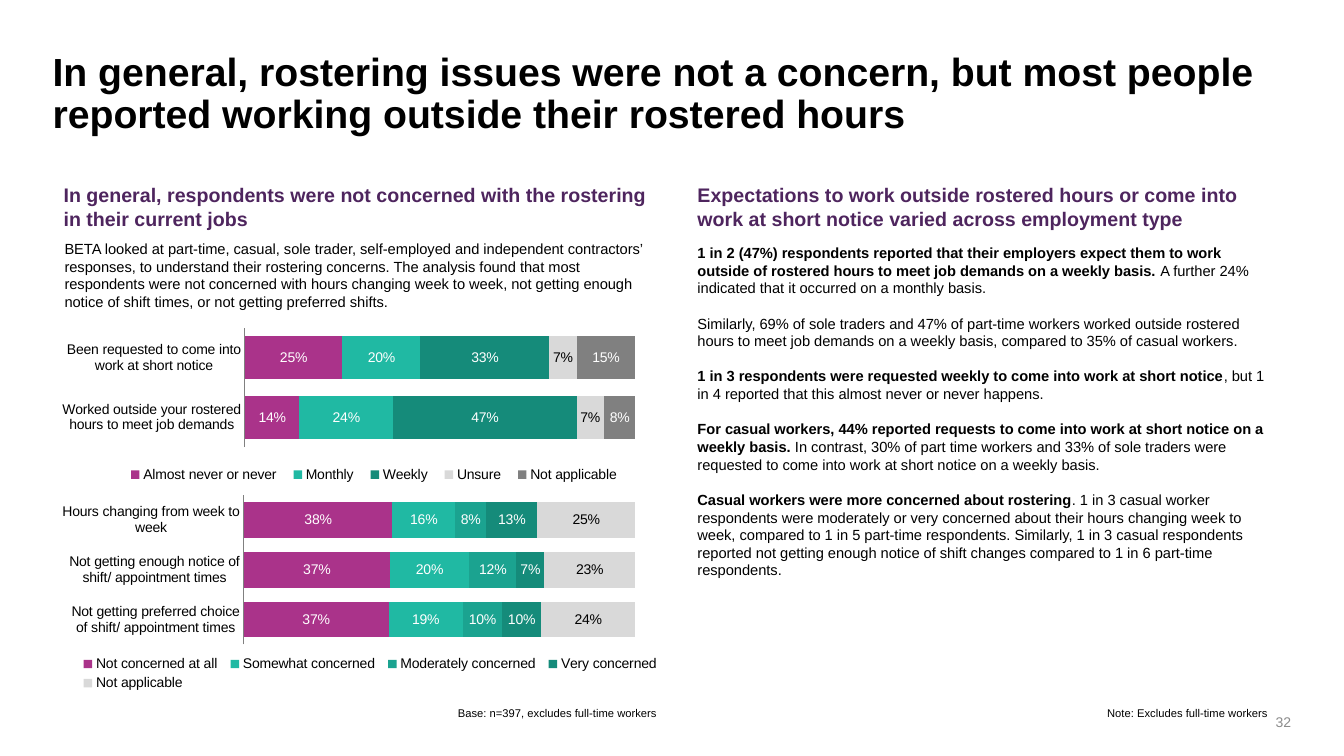
from dataclasses import dataclass

import lxml.etree
import pptx
import pptx.chart.data
import pptx.dml.color
import pptx.enum.chart
import pptx.enum.text
import pptx.oxml.ns
import pptx.util

Pt = pptx.util.Pt
Align = pptx.enum.text.PP_ALIGN
Anchor = pptx.enum.text.MSO_ANCHOR
FONT = "Arial"
BLACK, WHITE, PURPLE, GREY = "000000", "FFFFFF", "4E255E", "8C8C8C"
MAGENTA, TEAL, MID_TEAL, DARK_TEAL = "AA338A", "20B9A3", "1BA390", "158B7A"
LIGHT_GREY, MID_GREY = "D9D9D9", "808080"


@dataclass
class Box:
    left: float
    top: float
    width: float
    height: float

    def points(self) -> list:
        return [Pt(v) for v in (self.left, self.top, self.width, self.height)]


@dataclass
class Style:
    size: float
    colour: str = BLACK
    bold: bool = False
    align: Align = Align.LEFT
    anchor: Anchor = Anchor.TOP
    inset: bool = True
    line_spacing: float = 1.0
    gap: float = 0


@dataclass
class Run:
    text: str
    bold: bool = False


@dataclass
class Series:
    name: str
    values: tuple
    colour: str


@dataclass
class BarChart:
    box: Box
    legend: Box  # fractions of the chart
    categories: tuple
    series: tuple


TITLE = Style(28, bold=True, inset=False, line_spacing=0.9)
HEADING = Style(14, PURPLE, bold=True)
BODY = Style(10.5, gap=12.6)
NOTE = Style(8, align=Align.RIGHT, inset=False)
PAGE_NUMBER = Style(10, GREY, align=Align.RIGHT, anchor=Anchor.BOTTOM, inset=False)
PLOT = Box(0.3, 0.03, 0.65, 0.72)  # fractions of the chart

TITLE_TEXT = ("In general, rostering issues were not a concern, but most people "
              "reported working outside their rostered hours")
LEFT_HEADING = "In general, respondents were not concerned with the rostering in their current jobs"
RIGHT_HEADING = ("Expectations to work outside rostered hours or come into work at short notice "
                 "varied across employment type")
LEFT_BODY = (
    "BETA looked at part-time, casual, sole trader, self-employed and independent contractors’ "
    "responses, to understand their rostering concerns. The analysis found that most respondents "
    "were not concerned with hours changing week to week, not getting enough notice of shift "
    "times, or not getting preferred shifts.")
RIGHT_BODY = [
    [Run("1 in 2 (47%) respondents reported that their employers expect them to work outside of "
         "rostered hours to meet job demands on a weekly basis. ", True),
     Run("A further 24% indicated that it occurred on a monthly basis.")],
    [Run("Similarly, 69% of sole traders and 47% of part-time workers worked outside rostered "
         "hours to meet job demands on a weekly basis, compared to 35% of casual workers.")],
    [Run("1 in 3 respondents were requested weekly to come into work at short notice", True),
     Run(", but 1 in 4 reported that this almost never or never happens.")],
    [Run("For casual workers, 44% reported requests to come into work at short notice on a "
         "weekly basis. ", True),
     Run("In contrast, 30% of part time workers and 33% of sole traders were requested to come "
         "into work at short notice on a weekly basis.")],
    [Run("Casual workers were more concerned about rostering", True),
     Run(". 1 in 3 casual worker respondents were moderately or very concerned about their hours "
         "changing week to week, compared to 1 in 5 part-time respondents. Similarly, 1 in 3 "
         "casual respondents reported not getting enough notice of shift changes compared to "
         "1 in 6 part-time respondents.")],
]

CHARTS = (
    BarChart(
        Box(44.6, 349.2, 430.6, 148.3), Box(0.02, 0.79, 0.98, 0.2),
        ("Hours changing from week to week",
         "Not getting enough notice of shift/ appointment times",
         "Not getting preferred choice of shift/ appointment times"),
        (Series("Not concerned at all", (0.38, 0.37, 0.37), MAGENTA),
         Series("Somewhat concerned", (0.16, 0.2, 0.19), TEAL),
         Series("Moderately concerned", (0.08, 0.12, 0.1), MID_TEAL),
         Series("Very concerned", (0.13, 0.07, 0.1), DARK_TEAL),
         Series("Not applicable", (0.25, 0.23, 0.24), LIGHT_GREY))),
    BarChart(
        Box(44.6, 230.4, 430.6, 118.8), Box(0.09, 0.85, 0.85, 0.13),
        ("Been requested to come into work at short notice",
         "Worked outside your rostered hours to meet job demands"),
        (Series("Almost never or never", (0.25, 0.14), MAGENTA),
         Series("Monthly", (0.2, 0.24), TEAL),
         Series("Weekly", (0.33, 0.47), DARK_TEAL),
         Series("Unsure", (0.07, 0.07), LIGHT_GREY),
         Series("Not applicable", (0.15, 0.08), MID_GREY))),
)


def rgb(colour: str) -> pptx.dml.color.RGBColor:
    return pptx.dml.color.RGBColor.from_string(colour)


def write(shape, box: Box, paragraphs: list, style: Style) -> None:
    """Place a text shape and fill it run by run."""
    shape.left, shape.top, shape.width, shape.height = box.points()
    frame = shape.text_frame
    frame.word_wrap = True
    frame.auto_size = pptx.enum.text.MSO_AUTO_SIZE.NONE
    frame.vertical_anchor = style.anchor
    frame.margin_left = frame.margin_right = Pt(7.2 if style.inset else 0)
    frame.margin_top = frame.margin_bottom = Pt(3.6 if style.inset else 0)
    for index, runs in enumerate(paragraphs):
        paragraph = frame.add_paragraph() if index else frame.paragraphs[0]
        properties = paragraph._p.get_or_add_pPr()
        properties.set("marL", "0")
        properties.set("indent", "0")
        lxml.etree.SubElement(properties, pptx.oxml.ns.qn("a:buNone"))
        paragraph.alignment = style.align
        paragraph.line_spacing = style.line_spacing
        paragraph.space_before = Pt(style.gap if index else 0)
        paragraph.space_after = Pt(0)
        for item in runs:
            run = paragraph.add_run()
            run.text = item.text
            run.font.name = FONT
            run.font.size = Pt(style.size)
            run.font.bold = style.bold or item.bold
            run.font.color.rgb = rgb(style.colour)


def set_layout(parent, index: int, area: Box, inner: bool = False) -> None:
    """Give a chart part a fixed place, in fractions of the chart."""
    qn = pptx.oxml.ns.qn
    for existing in parent.findall(qn("c:layout")):
        parent.remove(existing)
    layout = parent.makeelement(qn("c:layout"))
    parent.insert(index, layout)
    manual = lxml.etree.SubElement(layout, qn("c:manualLayout"))
    settings = [("layoutTarget", "inner")] if inner else []
    settings += [("xMode", "edge"), ("yMode", "edge"), ("x", area.left), ("y", area.top),
                 ("w", area.width), ("h", area.height)]
    for name, value in settings:
        lxml.etree.SubElement(manual, qn(f"c:{name}")).set("val", str(value))


def draw_chart(slide, content: BarChart) -> None:
    data = pptx.chart.data.CategoryChartData(number_format="0%")
    data.categories = content.categories
    for item in content.series:
        data.add_series(item.name, item.values)
    enums = pptx.enum.chart
    chart = slide.shapes.add_chart(
        enums.XL_CHART_TYPE.BAR_STACKED_100, *content.box.points(), data).chart
    chart.has_title = False
    chart.font.name, chart.font.size = FONT, Pt(10)
    chart.font.color.rgb = rgb(BLACK)
    chart.has_legend = True
    chart.legend.position = enums.XL_LEGEND_POSITION.BOTTOM
    chart.legend.include_in_layout = False
    set_layout(chart.legend._element, 1, content.legend)
    set_layout(chart._chartSpace.chart.plotArea, 0, PLOT, inner=True)

    category_axis, value_axis = chart.category_axis, chart.value_axis
    category_axis.reverse_order = True
    category_axis.major_tick_mark = enums.XL_TICK_MARK.NONE
    category_axis.format.line.color.rgb = rgb(MID_GREY)
    value_axis.has_major_gridlines = False
    value_axis.maximum_scale = 1
    value_axis.visible = False

    plot = chart.plots[0]
    plot.gap_width, plot.overlap, plot.vary_by_categories = 40, 100, False
    for series, item in zip(plot.series, content.series):
        series.format.fill.solid()
        series.format.fill.fore_color.rgb = rgb(item.colour)
        labels = series.data_labels
        labels.show_value = True
        labels.number_format, labels.number_format_is_linked = "0%", False
        labels.position = enums.XL_LABEL_POSITION.CENTER
        labels.font.name, labels.font.size = FONT, Pt(10)
        labels.font.color.rgb = rgb(BLACK if item.colour == LIGHT_GREY else WHITE)


def main() -> None:
    presentation = pptx.Presentation()
    presentation.slide_width, presentation.slide_height = Pt(960), Pt(540)
    slide = presentation.slides.add_slide(presentation.slide_layouts.get_by_name("Comparison"))
    title, left_heading, left_body, right_heading, right_body = slide.placeholders
    write(title, Box(37.6, 37.6, 884, 61), [[Run(TITLE_TEXT)]], TITLE)
    write(left_heading, Box(38.2, 127.4, 431.3, 41), [[Run(LEFT_HEADING)]], HEADING)
    write(left_body, Box(38.9, 167.8, 430, 58.3), [[Run(LEFT_BODY)]], BODY)
    write(right_heading, Box(491, 127.4, 431.3, 41), [[Run(RIGHT_HEADING)]], HEADING)
    write(right_body, Box(491, 170.6, 424, 249), RIGHT_BODY, BODY)
    for content in CHARTS:
        draw_chart(slide, content)
    for text, box, style in (
            ("Base: n=397, excludes full-time workers", Box(289.4, 504.7, 180, 9.4), NOTE),
            ("Note: Excludes full-time workers", Box(778.3, 504.7, 127.4, 9.4), NOTE),
            ("32", Box(889.9, 509.8, 32.4, 12.2), PAGE_NUMBER)):
        write(slide.shapes.add_textbox(*box.points()), box, [[Run(text)]], style)
    presentation.save("out.pptx")


if __name__ == "__main__":
    main()
